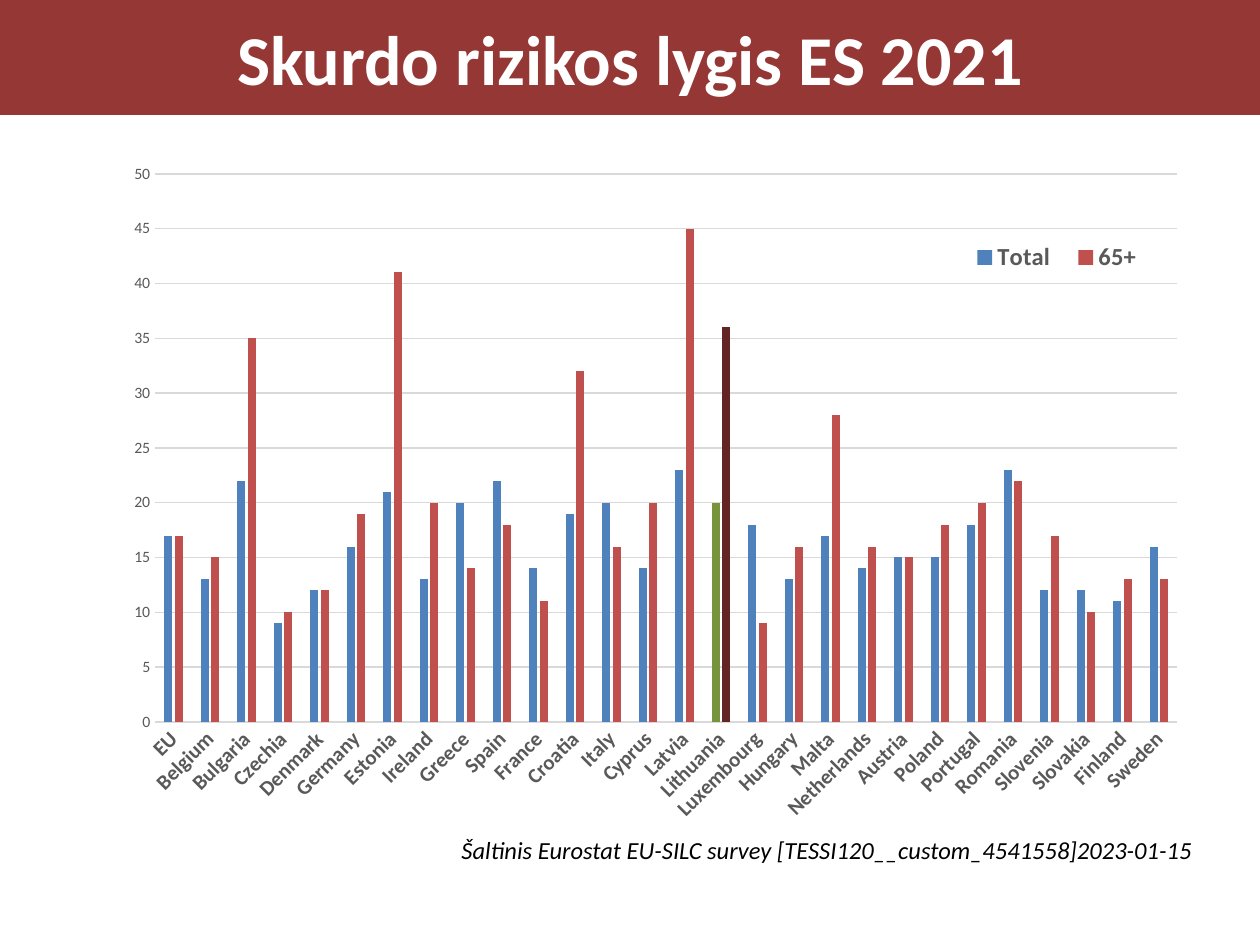
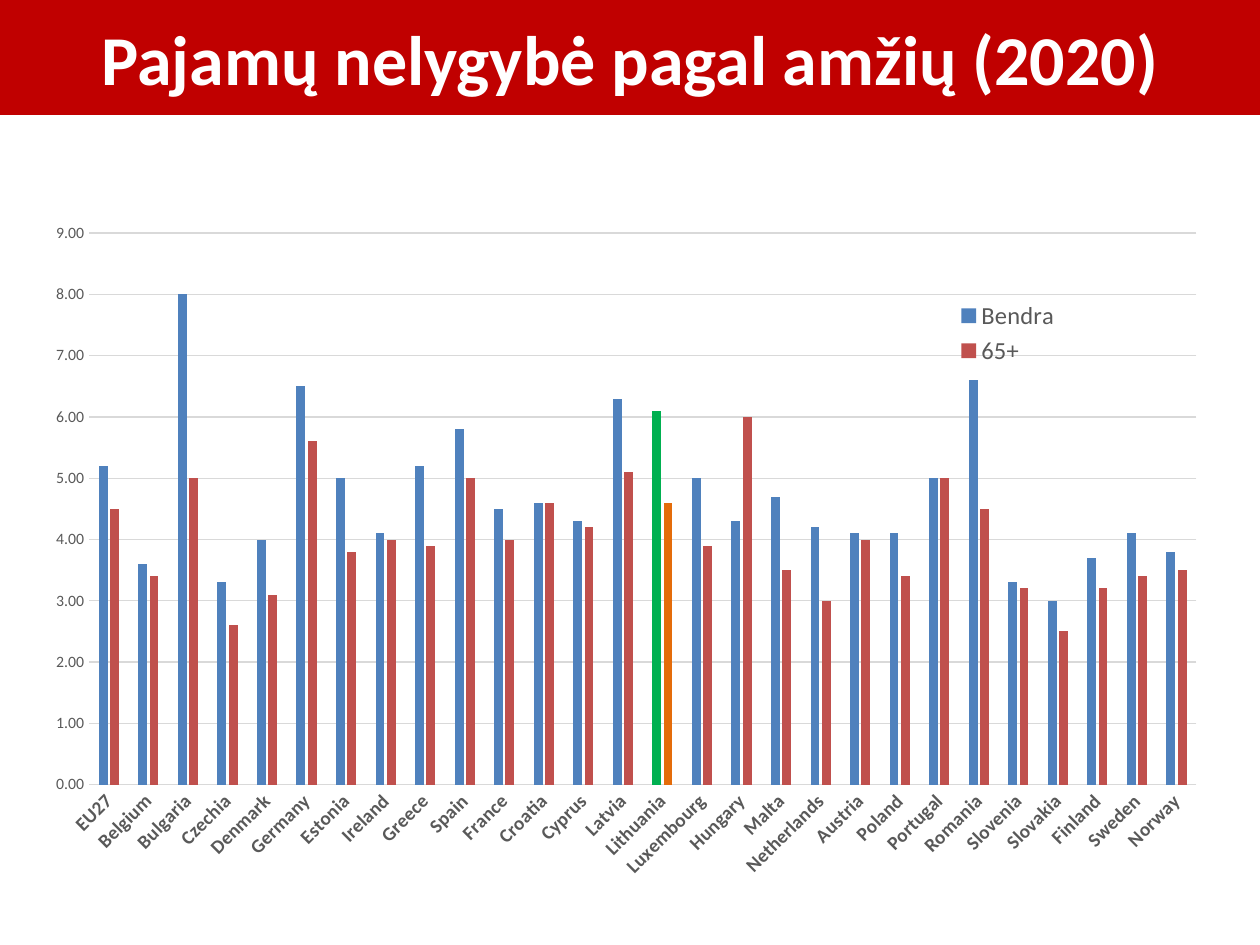
from pptx import Presentation
from pptx.chart.data import CategoryChartData as Data
from pptx.dml.color import RGBColor as Rgb
from pptx.enum.chart import XL_CHART_TYPE as Kind, XL_LEGEND_POSITION as Spot
from pptx.enum.chart import XL_TICK_MARK as Tick
from pptx.enum.shapes import MSO_SHAPE as Shape
from pptx.enum.text import MSO_ANCHOR as Anchor, MSO_AUTO_SIZE as Auto, PP_ALIGN as Align
from pptx.oxml import parse_xml
from pptx.oxml.ns import nsdecls, qn
from pptx.util import Pt

# Shared style
SCALE = 914400 / 126
FACE = "Calibri"
WHITE, BLACK, GREY, RULE = "FFFFFF", "000000", "595959", "D9D9D9"
BLUE, RED = "4F81BD", "C0504D"
TITLE = dict(size=40, bold=True, color=WHITE)
NOTE = dict(size=14, italic=True, color=BLACK)
HOME = "Lithuania"

# Countries
STATES = """Belgium Bulgaria Czechia Denmark Germany Estonia Ireland Greece Spain
France Croatia Italy Cyprus Latvia Lithuania Luxembourg Hungary Malta Netherlands
Austria Poland Portugal Romania Slovenia Slovakia Finland Sweden""".split()


def px(num):
    return round(num * SCALE)


def hue(code):
    return Rgb.from_string(code)


def paint(item, code):
    item.fill.solid()
    item.fill.fore_color.rgb = hue(code)


def style(font, size, color, **more):
    look = dict(name=FACE, size=Pt(size), **more)
    for key, val in look.items():
        setattr(font, key, val)
    font.color.rgb = hue(color)


def place(node, at, spot, inner=False):
    """Give a chart part a manual layout, as shares of the chart."""
    for old in node.findall(qn("c:layout")):
        node.remove(old)
    target = '<c:layoutTarget val="inner"/>' if inner else ""
    modes = "".join(f'<c:{k}Mode val="edge"/>' for k in "xy")
    sides = "".join(f'<c:{k} val="{v}"/>' for k, v in zip("xywh", at))
    node.insert(spot, parse_xml(
        f'<c:layout {nsdecls("c")}><c:manualLayout>{target}{modes}{sides}'
        "</c:manualLayout></c:layout>"))


class Deck:
    def __init__(self):
        self.prs = Presentation()
        self.prs.slide_width, self.prs.slide_height = px(1260), px(945)
        self.slide = None

    def page(self):
        self.slide = self.prs.slides.add_slide(self.prs.slide_layouts[6])

    def label(self, frame, text, align, look):
        frame.word_wrap = True
        para = frame.paragraphs[0]
        para.alignment = align
        run = para.add_run()
        run.text = text
        style(run.font, **look)

    def band(self, text, color):
        box = self.slide.shapes.add_shape(Shape.RECTANGLE, 0, 0, px(1260), px(115))
        box.shadow.inherit = False
        paint(box, color)
        box.line.fill.background()
        box.text_frame.vertical_anchor = Anchor.MIDDLE
        self.label(box.text_frame, text, Align.CENTER, TITLE)

    def note(self, text, *at):
        box = self.slide.shapes.add_textbox(*map(px, at))
        self.label(box.text_frame, text, Align.RIGHT, NOTE)
        box.text_frame.auto_size = Auto.SHAPE_TO_FIT_TEXT

    def chart(self, at, cats, rows, marks, top, step, form, plot, key, size, bold):
        data = Data()
        data.categories = cats
        for name, vals in rows.items():
            data.add_series(name, vals)
        chart = self.slide.shapes.add_chart(
            Kind.COLUMN_CLUSTERED, *map(px, at), data).chart
        style(chart.font, 10, BLACK)
        chart.has_title = False

        # Columns, with one country marked
        bars = chart.plots[0]
        for attr, val in dict(gap_width=219, overlap=-27, vary_by_categories=False).items():
            setattr(bars, attr, val)
        for row, color, mark in zip(bars.series, (BLUE, RED), marks):
            row.invert_if_negative = False
            paint(row.format, color)
            paint(row.points[cats.index(HOME)].format, mark)
        place(bars._element.getparent(), plot, 0, True)

        # Axes
        base, side = chart.category_axis, chart.value_axis
        for axis in (base, side):
            axis.major_tick_mark = axis.minor_tick_mark = Tick.NONE
        style(base.tick_labels.font, size, GREY, bold=True)
        base._element.find(qn("c:txPr")).find(qn("a:bodyPr")).set("rot", "-2700000")
        style(side.tick_labels.font, 9, GREY, bold=False)
        scale = dict(minimum_scale=0, maximum_scale=top, major_unit=step,
                     has_major_gridlines=True)
        for attr, val in scale.items():
            setattr(side, attr, val)
        side.tick_labels.number_format = form
        side.tick_labels.number_format_is_linked = False
        side.format.line.fill.background()
        for line in (base.format.line, side.major_gridlines.format.line):
            line.color.rgb = hue(RULE)
            line.width = Pt(0.75)

        # Legend
        chart.has_legend = True
        chart.legend.position = Spot.RIGHT
        chart.legend.include_in_layout = False
        style(chart.legend.font, 14, GREY, bold=bold)
        place(chart.legend._element, key, 1)


def main():
    deck = Deck()

    # Poverty risk
    deck.page()
    deck.band("Skurdo rizikos lygis ES 2021", "953735")
    deck.chart(
        (44, 163, 1171, 727), ["EU"] + STATES,
        {"Total": (17, 13, 22, 9, 12, 16, 21, 13, 20, 22, 14, 19, 20, 14,
                   23, 20, 18, 13, 17, 14, 15, 15, 18, 23, 12, 12, 11, 16),
         "65+": (17, 15, 35, 10, 12, 19, 41, 20, 14, 18, 11, 32, 16, 20,
                 45, 36, 9, 16, 28, 16, 15, 18, 20, 22, 17, 10, 13, 13)},
        marks=("77933C", "632523"), top=50, step=5, form="0",
        plot=(0.095, 0.015, 0.873, 0.754), key=(0.78, 0.1, 0.17, 0.06),
        size=12, bold=True)
    deck.note("Šaltinis Eurostat EU-SILC survey [TESSI120__custom_4541558]2023-01-15",
              441, 829, 764, 43)

    # Income gap by age
    deck.page()
    deck.band("Pajamų nelygybė pagal amžių (2020)", "C00000")
    deck.chart(
        (35, 214, 1201, 682),
        ["EU27"] + [name for name in STATES if name != "Italy"] + ["Norway"],
        {"Bendra": (5.2, 3.6, 8, 3.3, 4, 6.5, 5, 4.1, 5.2, 5.8, 4.5, 4.6, 4.3, 6.3,
                    6.1, 5, 4.3, 4.7, 4.2, 4.1, 4.1, 5, 6.6, 3.3, 3, 3.7, 4.1, 3.8),
         "65+": (4.5, 3.4, 5, 2.6, 3.1, 5.6, 3.8, 4, 3.9, 5, 4, 4.6, 4.2, 5.1,
                 4.6, 3.9, 6, 3.5, 3, 4, 3.4, 5, 4.5, 3.2, 2.5, 3.2, 3.4, 3.5)},
        marks=("00B050", "E46C0A"), top=9, step=1, form="0.00",
        plot=(0.045, 0.028, 0.922, 0.809), key=(0.75, 0.12, 0.12, 0.11),
        size=11, bold=False)

    deck.prs.save("out.pptx")


if __name__ == "__main__":
    main()
